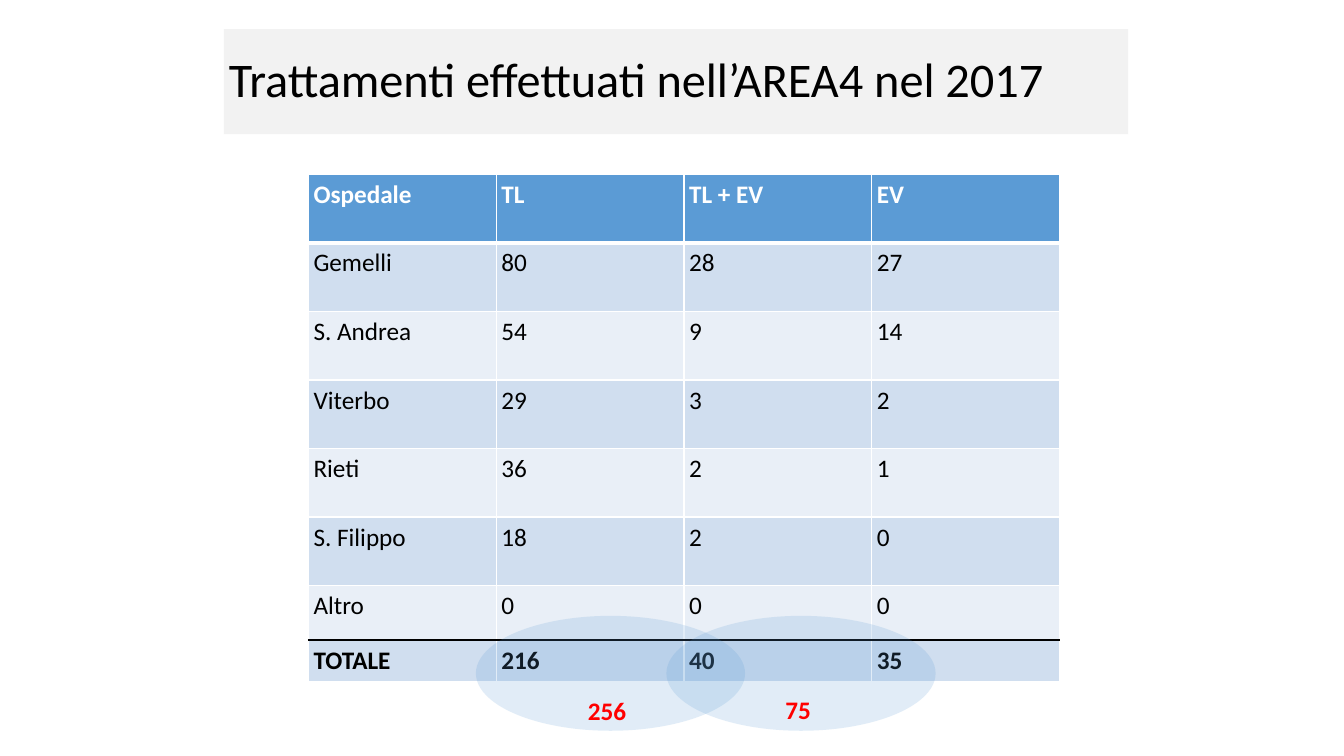
from dataclasses import dataclass

from lxml import etree
from pptx import Presentation
from pptx import util as u
from pptx.dml.color import RGBColor
from pptx.enum import shapes, text
from pptx.oxml.ns import qn


@dataclass(frozen=True)
class Theme:
    """Colours, font and type sizes of the slide."""
    font: str = "Calibri"
    title_size: float = 34.5
    body_size: float = 18
    black: str = "000000"
    white: str = "FFFFFF"
    red: str = "FF0000"
    panel: str = "F2F2F2"
    accent: str = "5B9BD5"
    bands: tuple = ("E9EFF7", "D0DEEF")
    oval_alpha: int = 18


THEME = Theme()
INSET = u.Inches(0.05)
ROWS = [
    ("Ospedale", "TL", "TL + EV", "EV"),
    ("Gemelli", "80", "28", "27"),
    ("S. Andrea", "54", "9", "14"),
    ("Viterbo", "29", "3", "2"),
    ("Rieti", "36", "2", "1"),
    ("S. Filippo", "18", "2", "0"),
    ("Altro", "0", "0", "0"),
    ("TOTALE", "216", "40", "35"),
]
ROW_HEIGHTS = [0.68] * 6 + [0.54, 0.41]


def set_attrs(obj, values):
    """Set each named attribute of an object."""
    for name, value in values.items():
        setattr(obj, name, value)


def set_fill(obj, color):
    """Give a shape or cell a solid fill."""
    obj.fill.solid()
    obj.fill.fore_color.rgb = RGBColor.from_string(color)


def write(p, content, size, color, bold=False):
    """Write one formatted run in a paragraph."""
    r = p.add_run()
    r.text = content
    set_attrs(r.font, {"name": THEME.font, "size": u.Pt(size), "bold": bold})
    r.font.color.rgb = RGBColor.from_string(color)


def margins(obj):
    """Apply the common inset on all four sides."""
    set_attrs(obj, {f"margin_{side}": INSET for side in ("left", "top", "right", "bottom")})


def add_border(cell, side, color, width):
    """Draw one solid border of a cell."""
    ln = etree.SubElement(cell._tc.get_or_add_tcPr(), qn(f"a:ln{side}"), w=str(u.Pt(width)))
    fill = etree.SubElement(ln, qn("a:solidFill"))
    etree.SubElement(fill, qn("a:srgbClr"), val=color)


def add_plain_shape(s, kind, box, color):
    """Add a filled shape without line or shadow."""
    sp = s.shapes.add_shape(kind, *map(u.Inches, box))
    sp.shadow.inherit = False
    set_fill(sp, color)
    sp.line.fill.background()
    return sp


def add_title(s, content, box):
    """Add the title on its grey panel."""
    tf = add_plain_shape(s, shapes.MSO_SHAPE.RECTANGLE, box, THEME.panel).text_frame
    margins(tf)
    set_attrs(tf, {"word_wrap": True, "vertical_anchor": text.MSO_ANCHOR.MIDDLE})
    p = tf.paragraphs[0]
    set_attrs(p, {"alignment": text.PP_ALIGN.LEFT, "line_spacing": 0.9})
    write(p, content, THEME.title_size, THEME.black)


def format_cell(cell, content, row):
    """Fill, border and write one table cell."""
    head, last = row == 0, len(ROWS) - 1
    borders = {
        "L": (THEME.white, 1),
        "R": (THEME.white, 1),
        "T": (THEME.black if row == last else THEME.white, 3 if row == 1 else 1),
        "B": (THEME.black if row == last - 1 else THEME.white, 3 if head else 1),
    }
    for side, (color, width) in borders.items():
        add_border(cell, side, color, width)
    set_fill(cell, THEME.accent if head else THEME.bands[row % 2])
    margins(cell)
    write(cell.text_frame.paragraphs[0], content, THEME.body_size,
          THEME.white if head else THEME.black, row in (0, last))


def add_treatments(s, box):
    """Add the table of treatments by hospital."""
    table = s.shapes.add_table(len(ROWS), len(ROWS[0]), *map(u.Inches, box)).table
    for column in table.columns:
        column.width = u.Inches(box[2] / len(ROWS[0]))
    for i, (values, height) in enumerate(zip(ROWS, ROW_HEIGHTS)):
        table.rows[i].height = u.Inches(height)
        for j, value in enumerate(values):
            format_cell(table.cell(i, j), value, i)


def add_oval(s, box):
    """Add a translucent oval."""
    sp = add_plain_shape(s, shapes.MSO_SHAPE.OVAL, box, THEME.accent)
    color = sp._element.spPr.find(qn("a:solidFill")).find(qn("a:srgbClr"))
    etree.SubElement(color, qn("a:alpha"), val=str(THEME.oval_alpha * 1000))


def add_sum(s, content, box):
    """Add a bold red sum."""
    tf = s.shapes.add_textbox(*map(u.Inches, box)).text_frame
    margins(tf)
    set_attrs(tf, {"word_wrap": False, "auto_size": text.MSO_AUTO_SIZE.SHAPE_TO_FIT_TEXT})
    write(tf.paragraphs[0], content, THEME.body_size, THEME.red, True)


def main():
    """Build and save the slide."""
    prs = Presentation()
    set_attrs(prs, {"slide_width": u.Inches(13.33), "slide_height": u.Inches(7.5)})
    s = prs.slides.add_slide(prs.slide_layouts[6])
    add_title(s, "Trattamenti effettuati nell’AREA4 nel 2017", (2.22, 0.29, 8.97, 1.04))
    add_treatments(s, (3.06, 1.73, 7.45, 5.02))
    for left, content, box in (
        (4.72, "256", (5.78, 6.85, 0.55, 0.39)),
        (6.61, "75", (7.74, 6.84, 0.41, 0.39)),
    ):
        add_oval(s, (left, 6.11, 2.67, 1.14))
        add_sum(s, content, box)
    prs.save("out.pptx")


if __name__ == "__main__":
    main()
